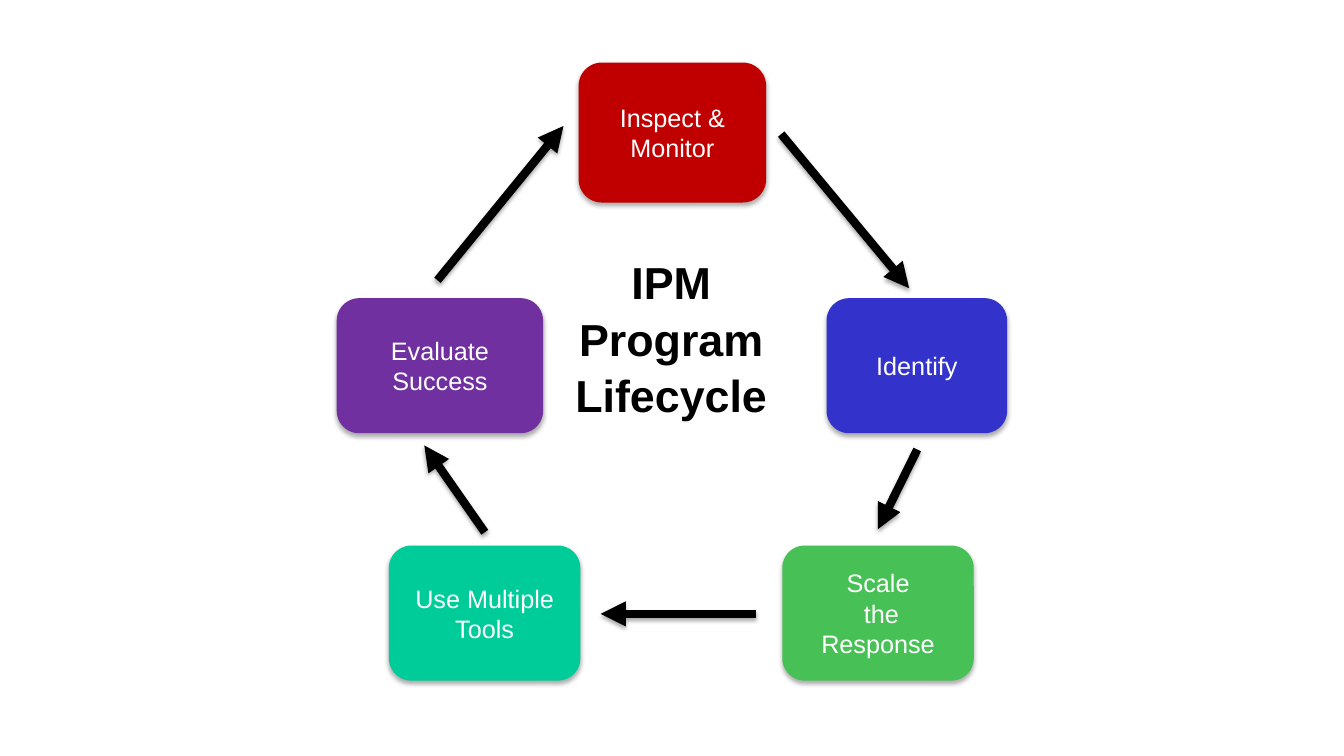
from lxml.etree import SubElement
from pptx import Presentation
from pptx.dml.color import RGBColor
from pptx.enum.shapes import MSO_CONNECTOR as Connector, MSO_SHAPE as Shape
from pptx.enum.text import MSO_ANCHOR as Anchor, PP_ALIGN as Align
from pptx.oxml.ns import qn
from pptx.util import Pt

STEPS = [
    (["Evaluate Success"], "7030A0", (240.5, 213, 147.5, 96.5)),
    (["Inspect & Monitor"], "C00000", (413.3, 44.7, 134, 100)),
    (["Identify"], "3333CC", (590.4, 213, 129, 96.5)),
    (["Scale", " the Response"], "47C156", (558.8, 389.7, 136.8, 96.5)),
    (["Use Multiple Tools"], "00CC99", (277.8, 389.7, 136.8, 96.5)),
]
ARROWS = [
    ((558, 95.8), (649.4, 205.9)),
    ((655.2, 321.1), (627.1, 378)),
    ((540, 438.5), (429.1, 438.5)),
    ((346.3, 380.2), (303.1, 318.2)),
    ((312.5, 200.2), (402.5, 90)),
]


def color(value):
    return RGBColor.from_string(value)


def write(frame, lines, size=18, ink="FFFFFF", bold=False, gap=0, plain=False):
    for index, line in enumerate(lines):
        paragraph = frame.paragraphs[0] if index == 0 else frame.add_paragraph()
        if plain:
            properties = paragraph._p.get_or_add_pPr()
            properties.set("marL", "0")
            properties.set("indent", "0")
            SubElement(properties, qn("a:buNone"))
        paragraph.alignment = Align.CENTER
        paragraph.space_before = Pt(gap if index else 0)
        run = paragraph.add_run()
        run.text = line
        run.font.name = "Arial"
        run.font.size = Pt(size)
        run.font.bold = bold
        run.font.color.rgb = color(ink)


def cast_shadow(effects, blur, distance, opacity):
    shadow = SubElement(
        effects, qn("a:outerShdw"), blurRad=str(Pt(blur)), dist=str(Pt(distance)),
        dir="5400000", algn="ctr", rotWithShape="0")
    tint = SubElement(shadow, qn("a:srgbClr"), val="000000")
    SubElement(tint, qn("a:alpha"), val=str(opacity * 1000))


class CycleSlide:
    """Draws the styled elements of a cycle diagram on one slide."""

    ink = "000000"

    def __init__(self, presentation):
        self.slide = presentation.slides.add_slide(presentation.slide_layouts[1])
        title = self.slide.shapes.title
        title._element.getparent().remove(title._element)

    def caption(self, lines, left, top, width, height, inset):
        body = self.slide.placeholders[1]
        body.left, body.top = Pt(left), Pt(top)
        body.width, body.height = Pt(width), Pt(height)
        frame = body.text_frame
        frame.margin_top = Pt(inset)
        frame.vertical_anchor = Anchor.TOP
        write(frame, lines, size=32, ink=self.ink, bold=True, gap=2, plain=True)

    def step(self, lines, fill, bounds):
        shape = self.slide.shapes.add_shape(
            Shape.ROUNDED_RECTANGLE, *map(Pt, bounds))
        shape.fill.solid()
        shape.fill.fore_color.rgb = color(fill)
        shape.line.fill.background()
        shape.shadow.inherit = False
        cast_shadow(shape._element.spPr.find(qn("a:effectLst")), 3.5, 2.2, 32)
        shape.text_frame.word_wrap = True
        shape.text_frame.vertical_anchor = Anchor.MIDDLE
        write(shape.text_frame, lines)

    def arrow(self, start, end):
        connector = self.slide.shapes.add_connector(
            Connector.STRAIGHT, *map(Pt, start + end))
        connector.line.color.rgb = color(self.ink)
        connector.line.width = Pt(6)
        SubElement(connector.line._get_or_add_ln(), qn("a:tailEnd"), type="triangle")
        effects = SubElement(connector._element.spPr, qn("a:effectLst"))
        cast_shadow(effects, 3.1, 1.8, 35)


def main():
    presentation = Presentation()
    presentation.slide_width, presentation.slide_height = Pt(960), Pt(540)
    cycle = CycleSlide(presentation)
    cycle.caption(["IPM", "Program", "Lifecycle"], 169.2, 60.5, 620.6, 426.2, 121.5)
    for lines, fill, bounds in STEPS:
        cycle.step(lines, fill, bounds)
    for start, end in ARROWS:
        cycle.arrow(start, end)
    presentation.save("out.pptx")


if __name__ == "__main__":
    main()
